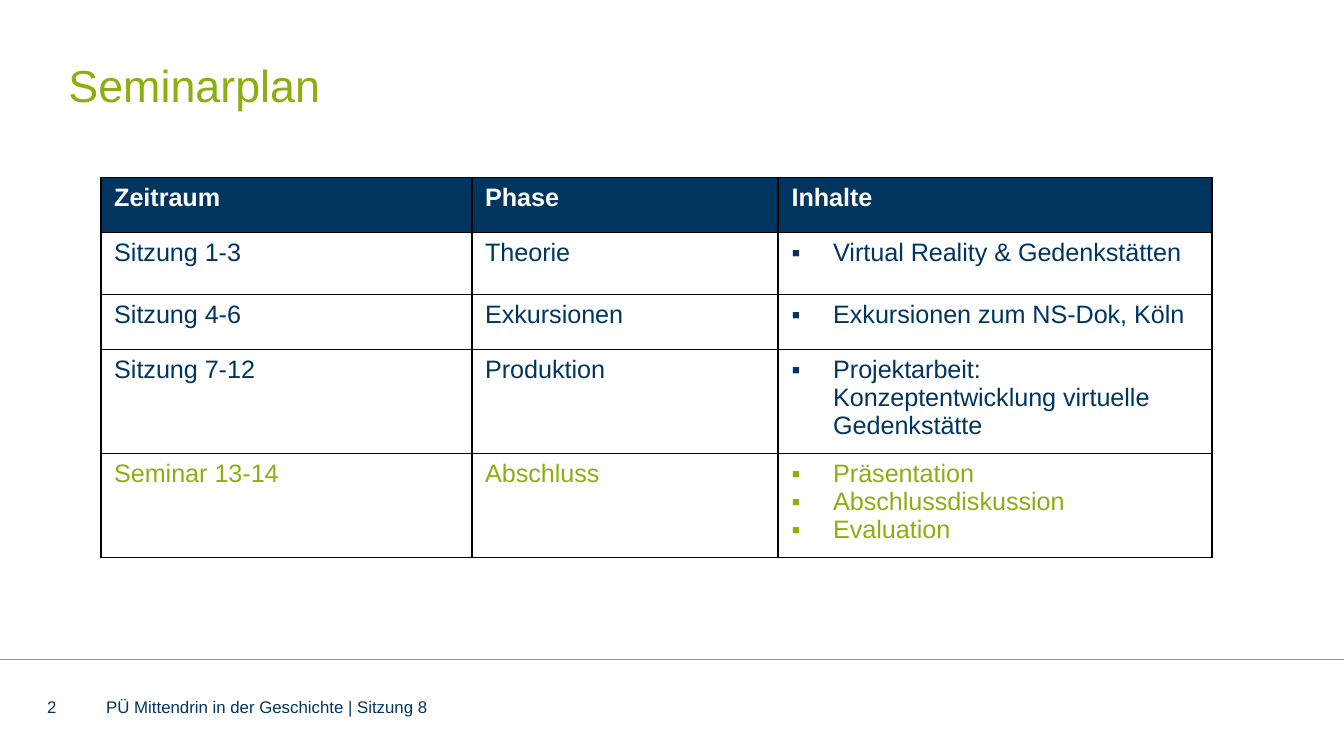
from lxml import etree
from pptx import Presentation
from pptx.dml.color import RGBColor
from pptx.enum import shapes, text
from pptx.oxml.ns import qn
from pptx.util import Inches, Pt

INK = {"navy": "003560", "green": "8DAE10", "white": "FFFFFF", "black": "000000"}
TOP, MID = text.MSO_ANCHOR.TOP, text.MSO_ANCHOR.MIDDLE
HEAD = ["Zeitraum", "Phase", "Inhalte"]
PLAN = [
    ("Sitzung 1-3", "Theorie", ["Virtual Reality & Gedenkstätten"]),
    ("Sitzung 4-6", "Exkursionen", ["Exkursionen zum NS-Dok, Köln"]),
    ("Sitzung 7-12", "Produktion",
     ["Projektarbeit: Konzeptentwicklung virtuelle Gedenkstätte"]),
    ("Seminar 13-14", "Abschluss",
     ["Präsentation", "Abschlussdiskussion", "Evaluation"]),
]
LABELS = [
    ("Seminarplan", (0.51, 0.43, 8.27, 0.51), 24, "green", TOP),
    ("2", (0.35, 5.2, 0.28, 0.12), 9, "navy", MID),
    ("PÜ Mittendrin in der Geschichte | Sitzung 8",
     (0.79, 5.2, 6.02, 0.12), 9, "navy", MID),
]
COLS = [2.76, 2.28, 3.23]
ROWS = [0.41, 0.46, 0.41, 0.41, 0.41]


def tint(name):
    return RGBColor.from_string(INK[name])


def write(frame, lines, size=13.5, color="navy", bold=False, bullet=False):
    frame.word_wrap = True
    for i, line in enumerate(lines):
        para = frame.paragraphs[0] if i == 0 else frame.add_paragraph()
        if bullet:
            props = para._p.get_or_add_pPr()
            props.set("marL", str(Inches(0.31)))
            props.set("indent", str(-Inches(0.31)))
            etree.SubElement(props, qn("a:buFont"), typeface="Arial")
            etree.SubElement(props, qn("a:buChar"), char="▪")
        run = para.add_run()
        run.text = line
        font = run.font
        font.name, font.size, font.bold = "Arial", Pt(size), bold
        font.color.rgb = tint(color)
        # The paragraph mark keeps the line as tall as its text
        etree.SubElement(para._p, qn("a:endParaRPr"), sz=str(int(size * 100)))


def label(slide, words, place, size, color, anchor):
    frame = slide.shapes.add_textbox(*map(Inches, place)).text_frame
    frame.margin_left = frame.margin_right = frame.margin_top = frame.margin_bottom = 0
    frame.vertical_anchor = anchor
    write(frame, [words], size=size, color=color)


def edge(cell):
    """Draw a thin black border on all four sides; call before the fill is set."""
    props = cell._tc.get_or_add_tcPr()
    for side in ("lnL", "lnR", "lnT", "lnB"):
        line = etree.SubElement(props, qn("a:" + side), w=str(Pt(1)))
        fill = etree.SubElement(line, qn("a:solidFill"))
        etree.SubElement(fill, qn("a:srgbClr"), val=INK["black"])


def plan(slide):
    place = map(Inches, (0.75, 1.32, sum(COLS), sum(ROWS)))
    table = slide.shapes.add_table(len(ROWS), len(COLS), *place).table
    for col, width in zip(table.columns, COLS):
        col.width = Inches(width)
    for row, height in zip(table.rows, ROWS):
        row.height = Inches(height)
    for r, row in enumerate([HEAD] + PLAN):
        top, last = r == 0, r == len(PLAN)
        color = "white" if top else "green" if last else "navy"
        for c, item in enumerate(row):
            cell = table.cell(r, c)
            edge(cell)
            cell.fill.solid()
            cell.fill.fore_color.rgb = tint("navy" if top else "white")
            listed = isinstance(item, list)
            write(cell.text_frame, item if listed else [item],
                  color=color, bold=top, bullet=listed)


def rule(slide):
    y = Inches(4.91)
    line = slide.shapes.add_connector(
        shapes.MSO_CONNECTOR.STRAIGHT, 0, y, Inches(10), y)
    line.line.color.rgb = tint("green")
    line.line.width = Pt(0.5)
    etree.SubElement(line._element.spPr, qn("a:effectLst"))


def main():
    deck = Presentation()
    deck.slide_width = Inches(10)
    deck.slide_height = deck.slide_width * 9 // 16
    slide = deck.slides.add_slide(deck.slide_layouts[6])
    rule(slide)
    for item in LABELS:
        label(slide, *item)
    plan(slide)
    deck.save("out.pptx")


if __name__ == "__main__":
    main()
